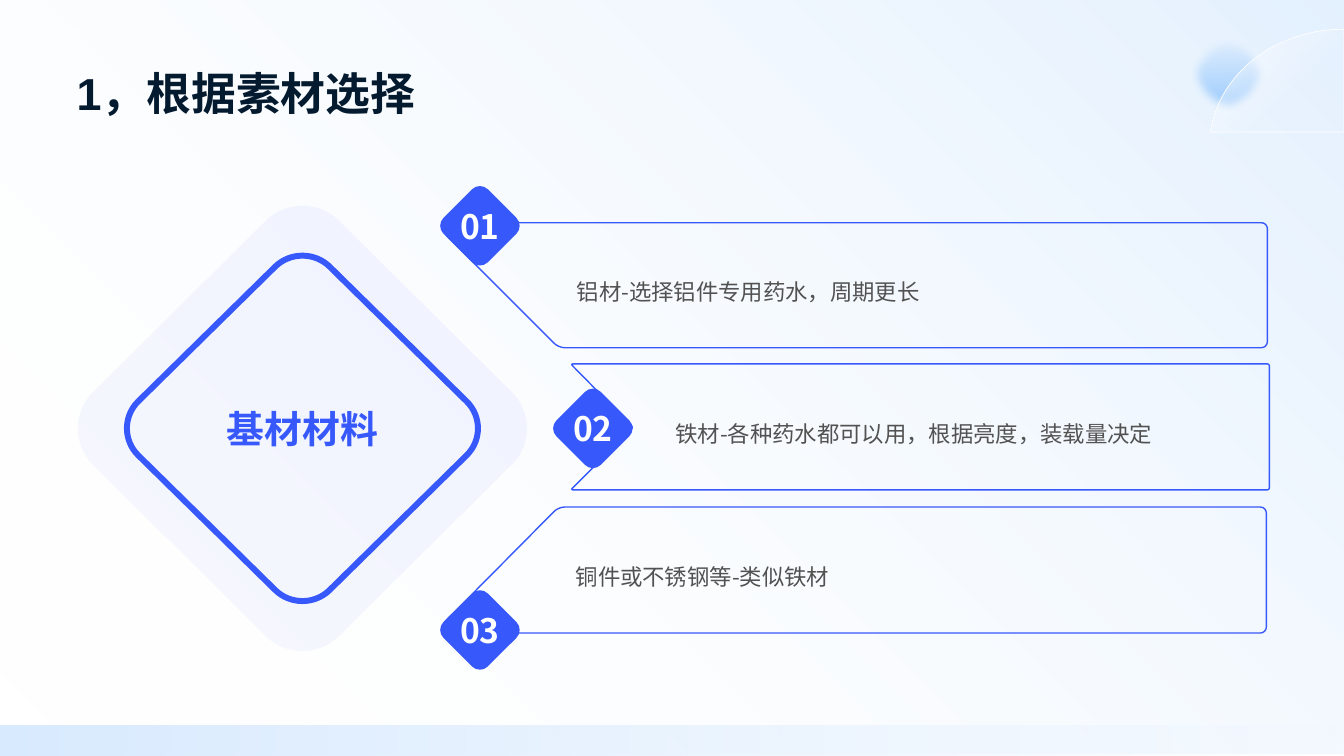
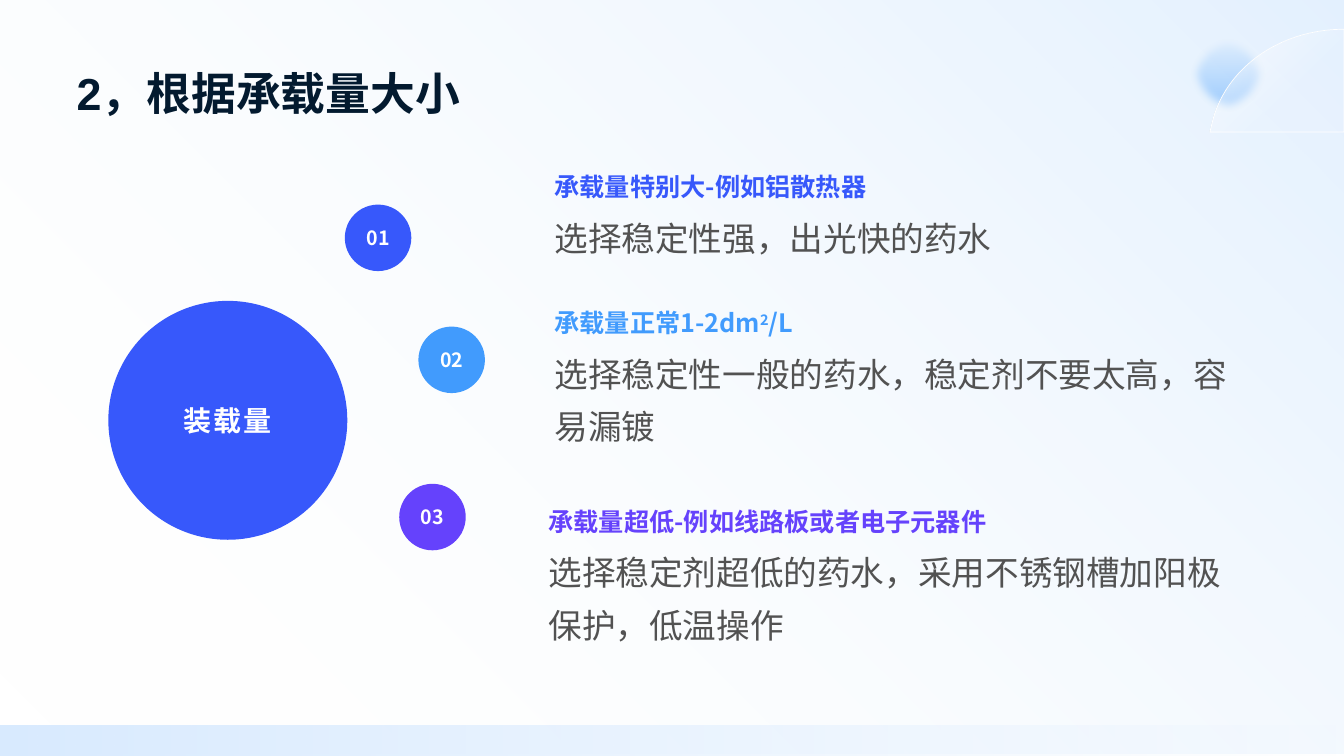
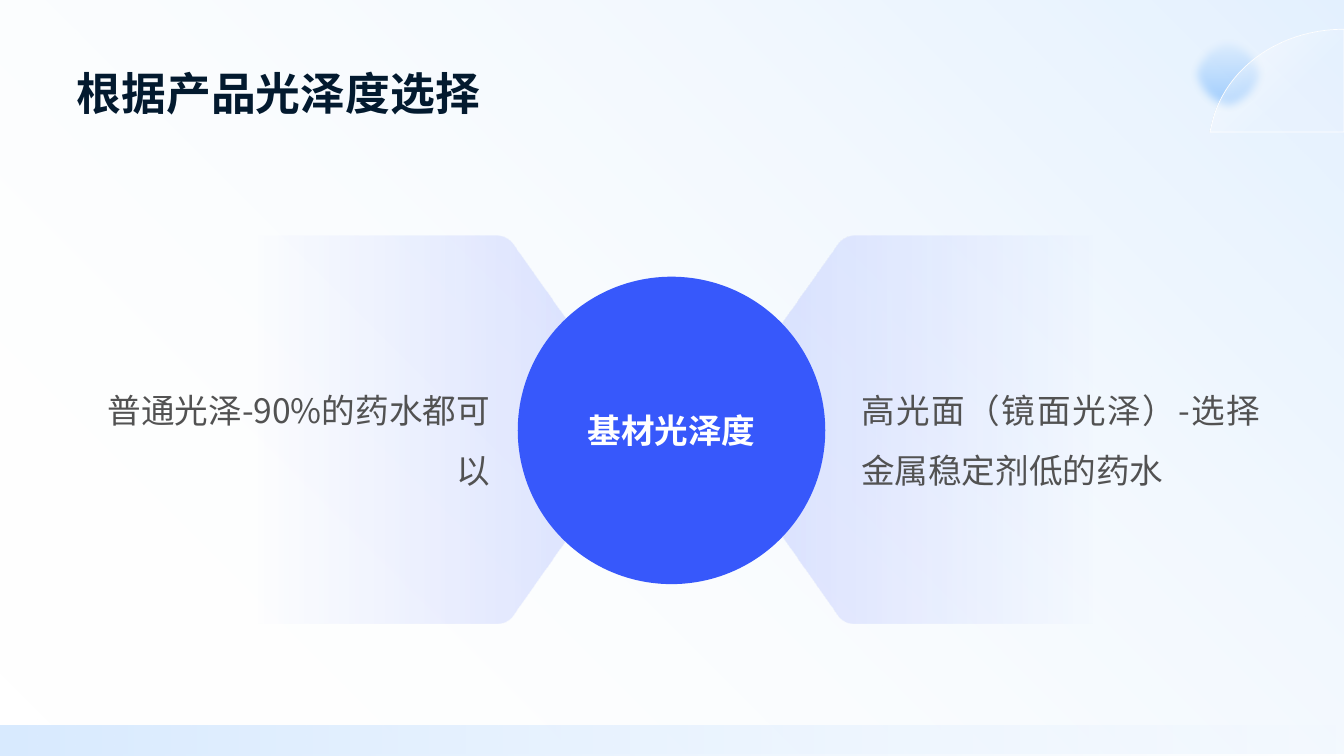
from dataclasses import dataclass
from typing import NamedTuple

from lxml import etree
from pptx import Presentation
from pptx import util as u
from pptx.dml import color as dml
from pptx.enum import shapes as kinds
from pptx.enum import text as t
from pptx.oxml import ns
from pptx.shapes import shapetree


@dataclass(frozen=True)
class Theme:
    blue: str = "3758FB"
    sky: str = "419BFD"
    violet: str = "6542FC"
    lavender: str = "C3CDFE"
    periwinkle: str = "879BFD"
    band: str = "D9EBFF"
    white: str = "FFFFFF"
    ink: str = "031A2F"
    grey: str = "525252"
    font: str = "Noto Sans CJK SC"
    title_font: str = "Arial"
    title: float = 32
    hub: float = 27
    large: float = 24
    medium: float = 20
    heading: float = 18
    body: float = 16
    small: float = 14


class Point(NamedTuple):
    x: float
    y: float


class Curve(NamedTuple):
    start: Point
    bend_out: Point
    bend_in: Point
    end: Point

    def middle(self) -> Point:
        return Point(*((a + 3 * b + 3 * c + d) / 8 for a, b, c, d in zip(*self)))


class Stop(NamedTuple):
    color: str
    alpha: int = 100
    position: int = 0


@dataclass(frozen=True)
class Card:
    number: str
    text: str
    outline: list[Point]
    radius: float
    text_left: float
    badge: Point


@dataclass(frozen=True)
class Level:
    number: str
    color: str
    dot: Point
    left: float
    top: float
    text: str
    heading: str
    raised: str = ""
    tail: str = ""


THEME = Theme()
WIDTH, HEIGHT = 13.33, 7.5
CORNER_PULL = 0.55

CARDS = [
    Card("01", "铝材-选择铝件专用药水，周期更长",
         [Point(4.39, 2.3), Point(4.5, 2.21), Point(12.57, 2.21), Point(12.57, 3.45),
          Point(5.54, 3.45)],
         0.06, 5.72, Point(4.76, 2.24)),
    Card("02", "铁材-各种药水都可以用，根据亮度，装载量决定",
         [Point(5.66, 3.61), Point(12.59, 3.61), Point(12.59, 4.86), Point(5.66, 4.86),
          Point(6.28, 4.24)],
         0.02, 6.7, Point(5.88, 4.25)),
    Card("03", "铜件或不锈钢等-类似铁材",
         [Point(4.39, 6.19), Point(4.5, 6.28), Point(12.56, 6.28), Point(12.56, 5.03),
          Point(5.54, 5.03)],
         0.06, 5.71, Point(4.76, 6.25)),
]

LEVELS = [
    Level("01", THEME.blue, Point(3.75, 2.36), 5.5, 1.59,
          "选择稳定性强，出光快的药水", "承载量特别大-例如铝散热器"),
    Level("02", THEME.sky, Point(4.48, 3.57), 5.5, 2.94,
          "选择稳定性一般的药水，稳定剂不要太高，容易漏镀", "承载量正常1-2dm", "2", "/L"),
    Level("03", THEME.violet, Point(4.29, 5.13), 5.44, 4.91,
          "选择稳定剂超低的药水，采用不锈钢槽加阳极保护，低温操作",
          "承载量超低-例如线路板或者电子元器件"),
]


def put_text(shape, text: str, *, raised: str = "", tail: str = "", size: float = THEME.body,
             color: str = THEME.grey, font: str = THEME.font, bold: bool = False,
             align=t.PP_ALIGN.LEFT, anchor=t.MSO_ANCHOR.MIDDLE, leading: float = 1.0,
             margins: tuple = (0, 0, 0, 0), wrap: bool = True, tracking: float = 0) -> None:
    frame = shape.text_frame
    frame.word_wrap = wrap
    frame.auto_size = t.MSO_AUTO_SIZE.NONE
    frame.vertical_anchor = anchor
    (frame.margin_left, frame.margin_top,
     frame.margin_right, frame.margin_bottom) = map(u.Inches, margins)
    para = frame.paragraphs[0]
    para.alignment = align
    para.line_spacing = leading
    for piece, baseline in ((text, 0), (raised, 30000), (tail, 0)):
        if not piece:
            continue
        span = para.add_run()
        span.text = piece
        span.font.size = u.Pt(size)
        span.font.bold = bold
        span.font.color.rgb = dml.RGBColor.from_string(color)
        span.font.name = font
        props = span.font._element
        props.set("lang", "zh-CN")
        if baseline:
            props.set("baseline", str(baseline))
        if tracking:
            props.set("spc", str(round(tracking * 100)))
        etree.SubElement(props, ns.qn("a:ea"), typeface=THEME.font)


def add_color(parent, stop: Stop) -> None:
    value = etree.SubElement(parent, ns.qn("a:srgbClr"), val=stop.color)
    if stop.alpha < 100:
        etree.SubElement(value, ns.qn("a:alpha"), val=str(stop.alpha * 1000))


def paint(shape, *stops: Stop, angle: int = 0, line: str = "", weight: float = 1) -> None:
    shape.shadow.inherit = False
    shape.fill.background()
    if line:
        shape.line.color.rgb = dml.RGBColor.from_string(line)
        shape.line.width = u.Pt(weight)
    else:
        shape.line.fill.background()
    if not stops:
        return
    empty = shape.element.spPr.find(ns.qn("a:noFill"))
    if len(stops) == 1:
        fill = etree.Element(ns.qn("a:solidFill"))
        add_color(fill, stops[0])
    else:
        fill = etree.Element(ns.qn("a:gradFill"), rotWithShape="1")
        ramp = etree.SubElement(fill, ns.qn("a:gsLst"))
        for stop in stops:
            mark = etree.SubElement(ramp, ns.qn("a:gs"), pos=str(stop.position * 1000))
            add_color(mark, stop)
        etree.SubElement(fill, ns.qn("a:lin"), ang=str(angle * 60000), scaled="0")
    empty.getparent().replace(empty, fill)


def add_preset(shapes, kind, left: float, top: float, width: float, height: float):
    return shapes.add_shape(kind, *map(u.Inches, (left, top, width, height)))


def add_circle(shapes, center: Point, size: float):
    return add_preset(shapes, kinds.MSO_SHAPE.OVAL,
                      center.x - size / 2, center.y - size / 2, size, size)


def mix(start: Point, end: Point, share: float) -> Point:
    return Point(start.x + (end.x - start.x) * share, start.y + (end.y - start.y) * share)


def toward(start: Point, end: Point, distance: float) -> Point:
    length = ((end.x - start.x) ** 2 + (end.y - start.y) ** 2) ** 0.5
    return mix(start, end, distance / length)


def rounded(corners: list[Point], radius: float) -> list[Curve]:
    curves = []
    for index, corner in enumerate(corners):
        start = toward(corner, corners[index - 1], radius)
        end = toward(corner, corners[(index + 1) % len(corners)], radius)
        curves.append(Curve(start, mix(start, corner, CORNER_PULL),
                            mix(end, corner, CORNER_PULL), end))
    return curves


def add_outline(shapes, curves: list[Curve], *straight: Point):
    points = [p for curve in curves for p in (curve.start, curve.middle(), curve.end)]
    first, *rest = [(u.Inches(p.x), u.Inches(p.y)) for p in [*points, *straight]]
    builder = shapes.build_freeform(*first)
    builder.add_line_segments(rest, close=True)
    shape = builder.convert_to_shape()
    track = next(shape.element.iter(ns.qn("a:path")))
    steps = list(track)
    for index, curve in enumerate(curves):
        middle, end = steps[3 * index + 1:3 * index + 3]
        track.remove(middle)
        bend = etree.Element(ns.qn("a:cubicBezTo"))
        for point in curve[1:]:
            etree.SubElement(bend, ns.qn("a:pt"), x=str(u.Inches(point.x) - shape.left),
                             y=str(u.Inches(point.y) - shape.top))
        track.replace(end, bend)
    return shape


def add_diamond(shapes, center: Point, half_width: float, half_height: float, radius: float):
    corners = [Point(center.x - half_width, center.y), Point(center.x, center.y - half_height),
               Point(center.x + half_width, center.y), Point(center.x, center.y + half_height)]
    return add_outline(shapes, rounded(corners, radius))


def build_layout(deck):
    layout = deck.slide_layouts.get_by_name("Title Only")
    title = layout.placeholders[0]
    title.left, title.top, title.width, title.height = map(u.Inches, (0.76, 0.4, 11.81, 0.79))
    shapes = shapetree.SlideShapes(layout.shapes.element, layout)
    rectangle = kinds.MSO_SHAPE.RECTANGLE

    backdrop = add_preset(shapes, rectangle, 0, 0, WIDTH, 7.48)
    paint(backdrop, Stop(THEME.white, 0), Stop(THEME.sky, 15, 100), angle=315)

    ball = add_circle(shapes, Point(12.18, 0.73), 0.81)
    paint(ball, Stop(THEME.sky, 0), Stop(THEME.sky, 50, 100), angle=90)
    effects = ball.element.spPr.find(ns.qn("a:effectLst"))
    etree.SubElement(effects, ns.qn("a:softEdge"), rad=str(u.Inches(0.09)))

    arc = Curve(Point(WIDTH, 0.29), Point(12.68, 0.29), Point(12.14, 0.69), Point(12.02, 1.23))
    dome = add_outline(shapes, [arc], Point(12, 1.31), Point(WIDTH, 1.31))
    paint(dome, Stop(THEME.white, 5, 39), Stop(THEME.white, 50, 83), angle=225,
          line=THEME.white, weight=0.5)

    band = add_preset(shapes, rectangle, 0, 7.2, WIDTH, HEIGHT - 7.2)
    paint(band, Stop(THEME.band, 0), Stop(THEME.band, 100, 100), angle=180)
    return layout


def add_page(deck, layout, title: str):
    page = deck.slides.add_slide(layout)
    put_text(page.shapes.title, title, size=THEME.title, color=THEME.ink,
             font=THEME.title_font, bold=True, anchor=t.MSO_ANCHOR.BOTTOM)
    return page.shapes


def add_card(shapes, card: Card) -> None:
    box = add_outline(shapes, rounded(card.outline, card.radius))
    paint(box, line=THEME.blue)
    put_text(box, card.text, leading=1.5, margins=(card.text_left - box.left.inches, 0, 0, 0))
    badge = add_diamond(shapes, card.badge, 0.44, 0.44, 0.11)
    paint(badge, Stop(THEME.blue))
    put_text(badge, card.number, size=THEME.large, color=THEME.white, bold=True,
             align=t.PP_ALIGN.CENTER, wrap=False)


def build_material(deck, layout) -> None:
    shapes = add_page(deck, layout, "1，根据素材选择")
    center = Point(3, 4.25)
    halo = add_diamond(shapes, center, 2.44, 2.42, 0.51)
    paint(halo, Stop(THEME.lavender, 15))
    for card in CARDS:
        add_card(shapes, card)
    hub = add_diamond(shapes, center, 1.9, 1.87, 0.38)
    paint(hub, line=THEME.blue, weight=4.25)
    put_text(hub, "基材材料", size=THEME.hub, color=THEME.blue, bold=True,
             align=t.PP_ALIGN.CENTER, margins=(0.39, 0, 0.39, 0))


def add_level(shapes, level: Level) -> None:
    heading_height = 0.45
    heading = shapes.add_textbox(*map(u.Inches, (level.left, level.top, 6.79, heading_height)))
    put_text(heading, level.heading, raised=level.raised, tail=level.tail, size=THEME.heading,
             color=level.color, bold=True, anchor=t.MSO_ANCHOR.BOTTOM, margins=(0, 0, 0, 0.04))
    body = shapes.add_textbox(
        *map(u.Inches, (level.left, level.top + heading_height, 6.79, 0.89)))
    put_text(body, level.text, size=THEME.large, leading=1.3, anchor=t.MSO_ANCHOR.TOP)
    dot = add_circle(shapes, level.dot, 0.66)
    paint(dot, Stop(level.color))
    put_text(dot, level.number, size=THEME.small, color=THEME.white, bold=True,
             align=t.PP_ALIGN.CENTER, wrap=False)


def build_load(deck, layout) -> None:
    shapes = add_page(deck, layout, "2，根据承载量大小")
    hub = add_circle(shapes, Point(2.26, 4.17), 2.37)
    paint(hub, Stop(THEME.blue))
    put_text(hub, "装载量", size=THEME.medium, color=THEME.white, bold=True,
             align=t.PP_ALIGN.CENTER, tracking=1.5)
    for level in LEVELS:
        add_level(shapes, level)


def build_gloss(deck, layout) -> None:
    shapes = add_page(deck, layout, "根据产品光泽度选择")
    mirror_sum, text_left = 13.4, 8.54
    right_corners = [Point(7.01, 4.26), Point(8.37, 2.34), Point(12.5, 2.34),
                     Point(12.5, 6.19), Point(8.37, 6.19)]
    left_corners = [Point(mirror_sum - corner.x, corner.y) for corner in right_corners]
    radius = 0.1

    right = add_outline(shapes, rounded(right_corners, radius))
    inset = text_left - right.left.inches
    paint(right, Stop(THEME.periwinkle, 30), Stop(THEME.periwinkle, 0, 70))
    put_text(right, "高光面（镜面光泽）-选择金属稳定剂低的药水", size=THEME.large,
             align=t.PP_ALIGN.JUSTIFY, leading=1.5, margins=(inset, 0.05, 0, 0.05))

    left = add_outline(shapes, rounded(left_corners, radius))
    paint(left, Stop(THEME.periwinkle, 0, 30), Stop(THEME.periwinkle, 30, 100))
    put_text(left, "普通光泽-90%的药水都可以", size=THEME.large,
             align=t.PP_ALIGN.RIGHT, leading=1.5, margins=(0, 0.05, inset, 0.05))

    hub = add_circle(shapes, Point(6.66, 4.27), 3.05)
    paint(hub, Stop(THEME.blue))
    put_text(hub, "基材光泽度", size=THEME.large, color=THEME.white, bold=True,
             align=t.PP_ALIGN.CENTER)


def main() -> None:
    deck = Presentation()
    deck.slide_width, deck.slide_height = u.Inches(WIDTH), u.Inches(HEIGHT)
    layout = build_layout(deck)
    for build in (build_material, build_load, build_gloss):
        build(deck, layout)
    deck.save("out.pptx")


if __name__ == "__main__":
    main()
